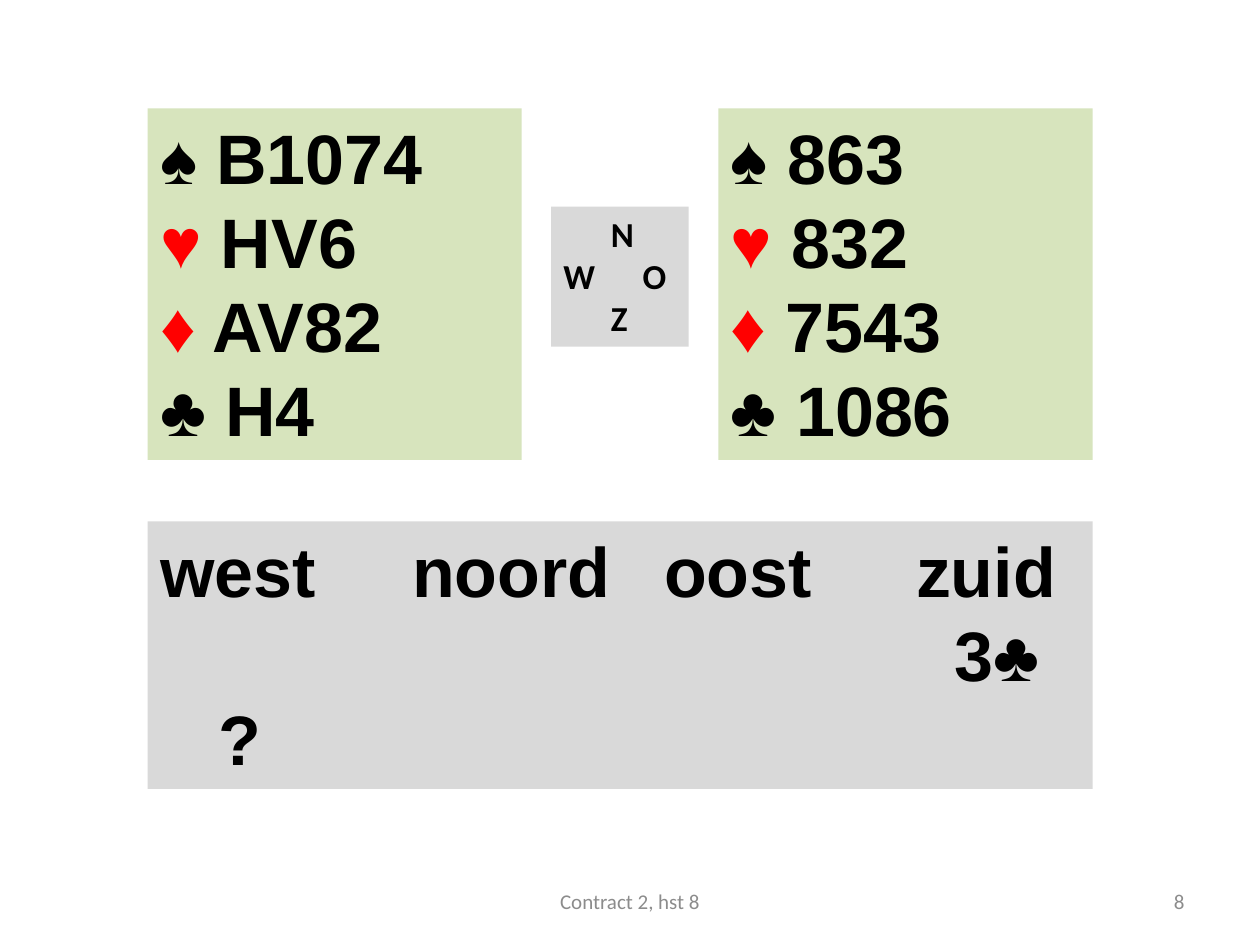
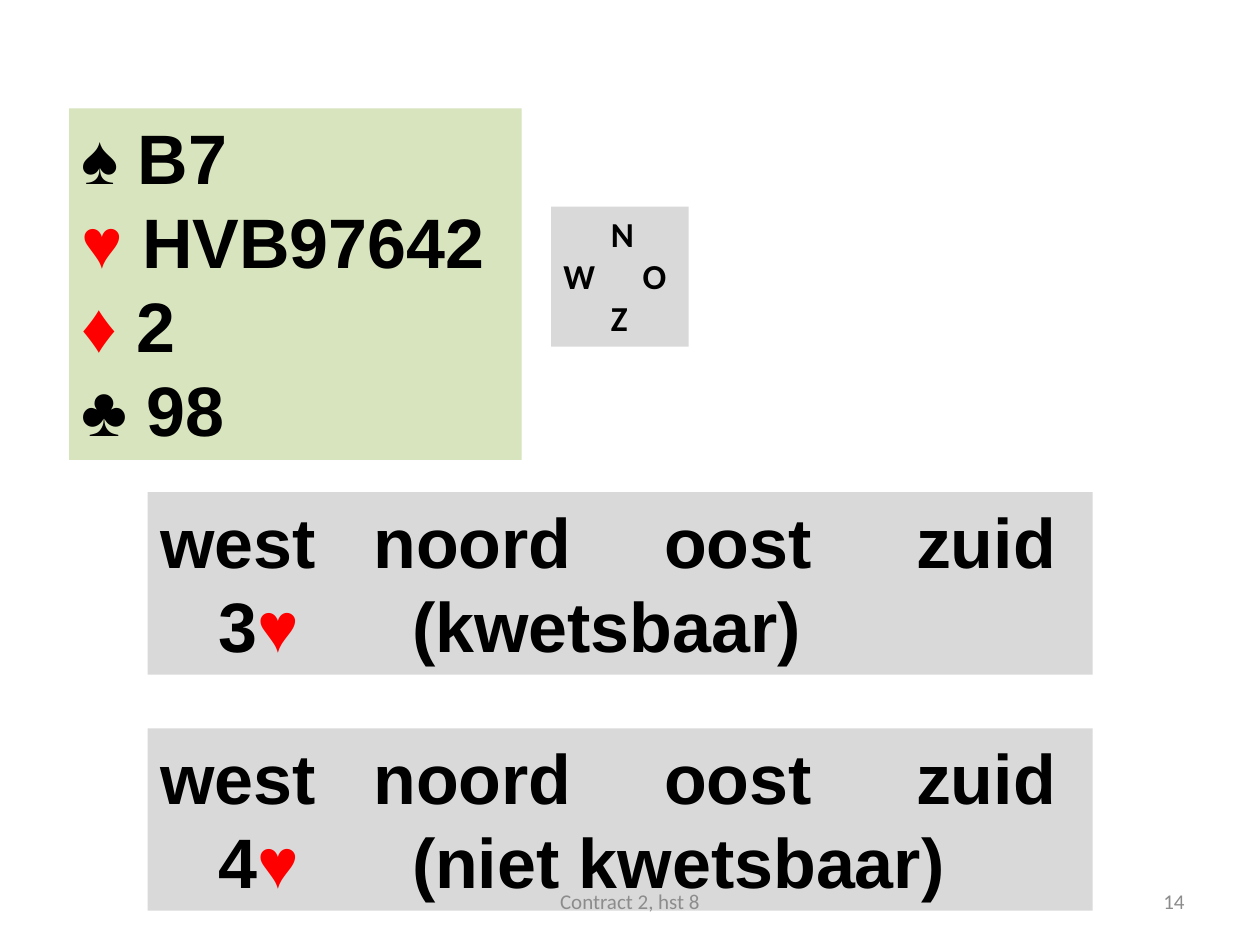
from itertools import groupby

from lxml.etree import SubElement
from pptx import Presentation
from pptx.dml.color import RGBColor
from pptx.enum.shapes import MSO_SHAPE
from pptx.enum.text import MSO_ANCHOR, PP_ALIGN
from pptx.oxml.ns import qn
from pptx.util import Pt

COLORS = {
    "hand": "D7E4BD",
    "panel": "D9D9D9",
    "text": "000000",
    "red suit": "FF0000",
    "footer": "8C8C8C",
}
CARD_FONT = {"name": "Arial", "size": Pt(40), "bold": True}
COMPASS_FONT = {"name": "Calibri", "size": Pt(20), "bold": True}
FOOTER_FONT = {"name": "Calibri", "size": Pt(12), "bold": False}
PANEL_FORMAT = {
    "word_wrap": True,
    "vertical_anchor": MSO_ANCHOR.TOP,
    "margin_top": Pt(3.5),
    "margin_bottom": Pt(0),
}

SUITS = "♠♥♦♣"
RED_SUITS = "♥♦"
PANEL_LEFT, PANEL_WIDTH = 84.4, 540
HAND_TOP, HAND_HEIGHT = 61.9, 200.9
NORTH, EAST, SOUTH = 144, 288, 432
BID_INDENT = 33.3
COMPASS_ROWS = [[(27.1, "N")], [(0, "W"), (45.2, "O")], [(27.1, "Z")]]


def add_runs(paragraph, text, font, color):
    """Write text, giving the red suit symbols their own colour."""
    for is_red, letters in groupby(text, key=lambda letter: letter in RED_SUITS):
        run = paragraph.add_run()
        run.text = "".join(letters)
        for attribute, value in font.items():
            setattr(run.font, attribute, value)
        run.font.color.rgb = RGBColor.from_string(COLORS["red suit" if is_red else color])


def add_panel(slide, box, fill, rows, font=CARD_FONT):
    """Add a filled box; each row is a list of (distance from the left, text)."""
    shape = slide.shapes.add_shape(MSO_SHAPE.RECTANGLE, *map(Pt, box))
    shape.shadow.inherit = False
    shape.fill.solid()
    shape.fill.fore_color.rgb = RGBColor.from_string(COLORS[fill])
    shape.line.fill.background()
    frame = shape.text_frame
    for attribute, value in PANEL_FORMAT.items():
        setattr(frame, attribute, value)
    for index, row in enumerate(rows):
        paragraph = frame.add_paragraph() if index else frame.paragraphs[0]
        paragraph.alignment = PP_ALIGN.LEFT
        stops = [offset for offset, _ in row if offset]
        if stops:
            tab_list = SubElement(paragraph._p.get_or_add_pPr(), qn("a:tabLst"))
            for offset in stops:
                SubElement(tab_list, qn("a:tab"), pos=str(int(Pt(offset))), algn="l")
        text = "".join(("\t" if offset else "") + words for offset, words in row)
        add_runs(paragraph, text, font, "text")


DEALS = [
    {
        "number": "8",
        "hands": [
            (PANEL_LEFT, 213.8, ["B1074", "HV6", "AV82", "H4"]),
            (410.6, 213.8, ["863", "832", "7543", "1086"]),
        ],
        "north": NORTH,
        "auctions": [
            (298, 152.8, [[(SOUTH + 22.2, "3♣")], [(BID_INDENT, "?")]]),
        ],
    },
    {
        "number": "14",
        "hands": [(39.5, 258.7, ["B7", "HVB97642", "2", "98"])],
        "north": 122,
        "auctions": [
            (281.3, 104.2, [[(BID_INDENT, "3♥"), (NORTH, "(kwetsbaar)")]]),
            (416.2, 104.2, [[(BID_INDENT, "4♥"), (NORTH, "(niet kwetsbaar)")]]),
        ],
    },
]

presentation = Presentation()
presentation.slide_width, presentation.slide_height = Pt(720), Pt(540)

for deal in DEALS:
    slide = presentation.slides.add_slide(presentation.slide_layouts[6])

    for left, width, holdings in deal["hands"]:
        rows = [[(0, f"{suit} {cards}")] for suit, cards in zip(SUITS, holdings)]
        add_panel(slide, (left, HAND_TOP, width, HAND_HEIGHT), "hand", rows)

    add_panel(slide, (314.9, 118.1, 78.7, 80), "panel", COMPASS_ROWS, COMPASS_FONT)

    heading = [(0, "west"), (deal["north"], "noord"), (EAST, "oost"), (SOUTH, "zuid")]
    for top, height, bids in deal["auctions"]:
        add_panel(slide, (PANEL_LEFT, top, PANEL_WIDTH, height), "panel", [heading] + bids)

    footers = [
        (516, 168, PP_ALIGN.RIGHT, deal["number"]),
        (246, 228, PP_ALIGN.CENTER, "Contract 2, hst 8"),
    ]
    for left, width, alignment, text in footers:
        frame = slide.shapes.add_textbox(Pt(left), Pt(500.5), Pt(width), Pt(28.75)).text_frame
        frame.word_wrap = True
        frame.vertical_anchor = MSO_ANCHOR.MIDDLE
        frame.paragraphs[0].alignment = alignment
        add_runs(frame.paragraphs[0], text, FOOTER_FONT, "footer")

presentation.save("out.pptx")
